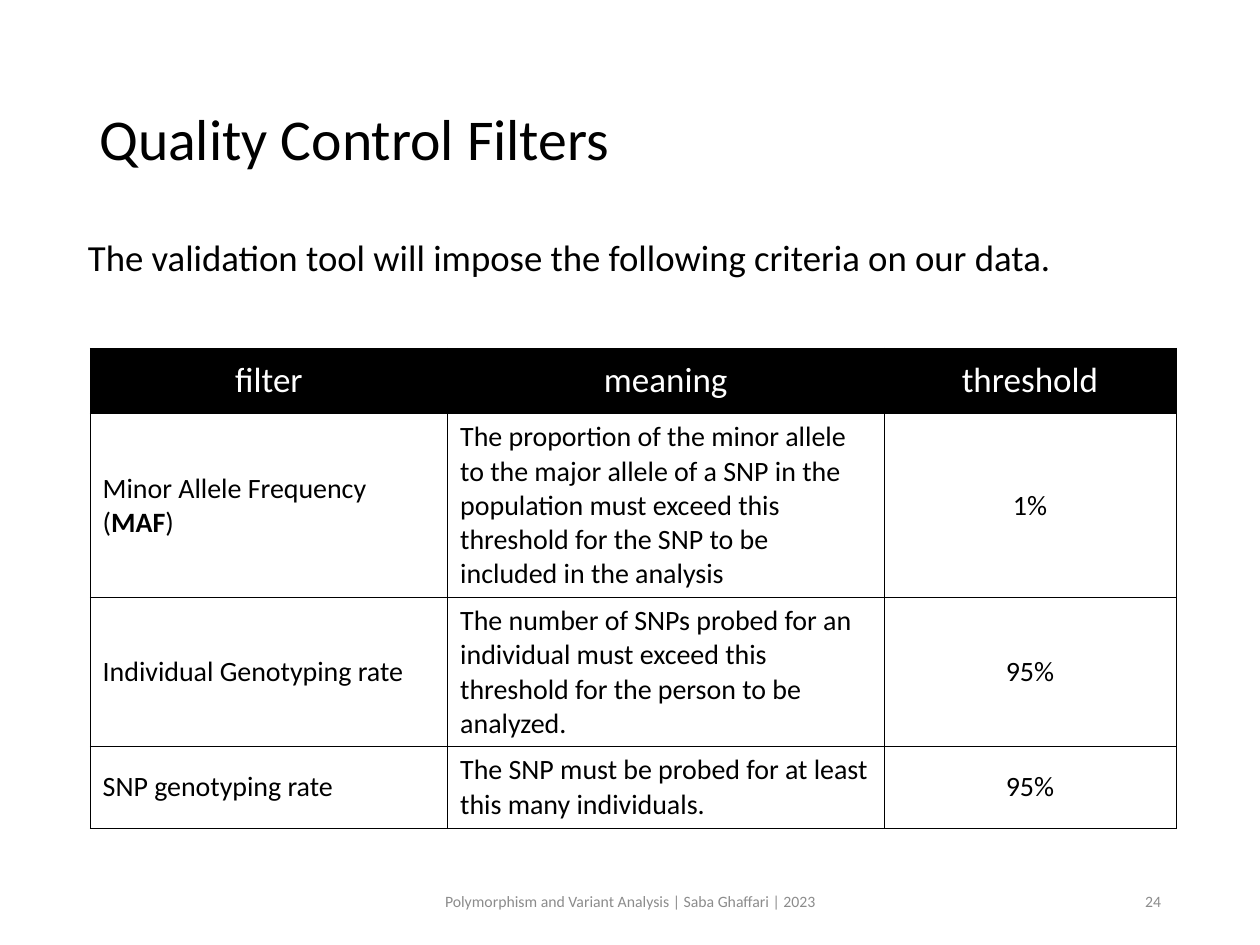
from typing import NamedTuple

from lxml.etree import SubElement
from pptx import Presentation
from pptx.dml.color import RGBColor
from pptx.enum.text import MSO_ANCHOR as Anchor, MSO_AUTO_SIZE as Fit, PP_ALIGN as Align
from pptx.oxml.ns import qn
from pptx.util import Pt

BLACK = RGBColor(0, 0, 0)
WHITE = RGBColor(255, 255, 255)
GRAY = RGBColor(0x8C, 0x8C, 0x8C)
FONT = "Calibri"


class Box(NamedTuple):
    left: float
    top: float
    width: float
    height: float


class Rule(NamedTuple):
    """A filter's name, the bold part after it in brackets, and its limits."""
    name: str
    short: str
    meaning: str
    limit: str


TITLE = Box(49.5, 28.8, 621, 104.4)
BODY = Box(43, 133.2, 621, 319.7)
FOOTER = Box(238.5, 500.4, 243, 28.8)
NUMBER = Box(508.5, 500.4, 162, 28.8)
GRID = Box(51.5, 199, 620.6, 275)
COLS = (204.3, 249.3, 167)
ROWS = (37.5, 105, 85, 47)

HEADS = ("filter", "meaning", "threshold")
RULES = (
    Rule("Minor Allele Frequency", "MAF",
         "The proportion of the minor allele to the major allele of a SNP in the "
         "population must exceed this threshold for the SNP to be included in the analysis",
         "1%"),
    Rule("Individual Genotyping rate", "",
         "The number of SNPs probed for an individual must exceed this threshold "
         "for the person to be analyzed.", "95%"),
    Rule("SNP genotyping rate", "",
         "The SNP must be probed for at least this many individuals.", "95%"),
)


def write(frame, *parts: str, size: float, color=BLACK, align=Align.LEFT,
          anchor=Anchor.MIDDLE, line=None, before=0):
    """Fill a text frame with one paragraph; every second part is bold."""
    frame.word_wrap = True
    frame.vertical_anchor = anchor
    para = frame.paragraphs[0]
    para.alignment = align
    para.line_spacing = line
    para.space_before = Pt(before)
    for i, part in enumerate(parts):
        run = para.add_run()
        run.text = part
        font = run.font
        font.name, font.size, font.bold = FONT, Pt(size), i % 2 == 1
        font.color.rgb = color
    return para


def place(shape, box: Box):
    shape.left, shape.top, shape.width, shape.height = map(Pt, box)
    shape.text_frame.auto_size = Fit.NONE
    return shape.text_frame


def label(slide, box: Box, text: str, align):
    shape = slide.shapes.add_textbox(*map(Pt, box))
    write(shape.text_frame, text, size=9, color=GRAY, align=align)


def edge(cell, fill: RGBColor):
    """Give a cell thin black borders and a solid fill."""
    props = cell._tc.get_or_add_tcPr()
    for side, width in (("L", 0.25), ("R", 0.25), ("T", 0.5), ("B", 0.5)):
        line = SubElement(props, qn(f"a:ln{side}"), w=str(Pt(width)))
        solid = SubElement(line, qn("a:solidFill"))
        SubElement(solid, qn("a:srgbClr"), val=str(BLACK))
    cell.fill.solid()
    cell.fill.fore_color.rgb = fill


def draw_table(slide):
    table = slide.shapes.add_table(len(ROWS), len(COLS), *map(Pt, GRID)).table
    for col, width in zip(table.columns, COLS):
        col.width = Pt(width)
    for row, height in zip(table.rows, ROWS):
        row.height = Pt(height)
    for cell, head in zip(table.rows[0].cells, HEADS):
        edge(cell, BLACK)
        cell.vertical_anchor = Anchor.MIDDLE
        write(cell.text_frame, head, size=20, color=WHITE, align=Align.CENTER)
    for row, rule in zip(list(table.rows)[1:], RULES):
        name = (f"{rule.name} (", rule.short, ")") if rule.short else (rule.name,)
        texts = (name, (rule.meaning,), (rule.limit,))
        for cell, parts, align in zip(row.cells, texts, (Align.LEFT, Align.LEFT, Align.CENTER)):
            edge(cell, WHITE)
            cell.vertical_anchor = Anchor.MIDDLE
            write(cell.text_frame, *parts, size=16, align=align)


def main():
    deck = Presentation()
    deck.slide_width, deck.slide_height = Pt(720), Pt(540)
    slide = deck.slides.add_slide(deck.slide_layouts[1])
    write(place(slide.shapes.title, TITLE), "Quality Control Filters", size=33, line=0.9)
    para = write(place(slide.placeholders[1], BODY),
                 "The validation tool will impose the following criteria on our data.",
                 size=21, anchor=Anchor.TOP, line=0.9, before=7.5)
    props = para._p.get_or_add_pPr()
    props.set("marL", "0")
    props.set("indent", "0")
    SubElement(props, qn("a:buNone"))
    label(slide, FOOTER, "Polymorphism and Variant Analysis | Saba Ghaffari | 2023", Align.CENTER)
    label(slide, NUMBER, "24", Align.RIGHT)
    draw_table(slide)
    deck.save("out.pptx")


if __name__ == "__main__":
    main()
